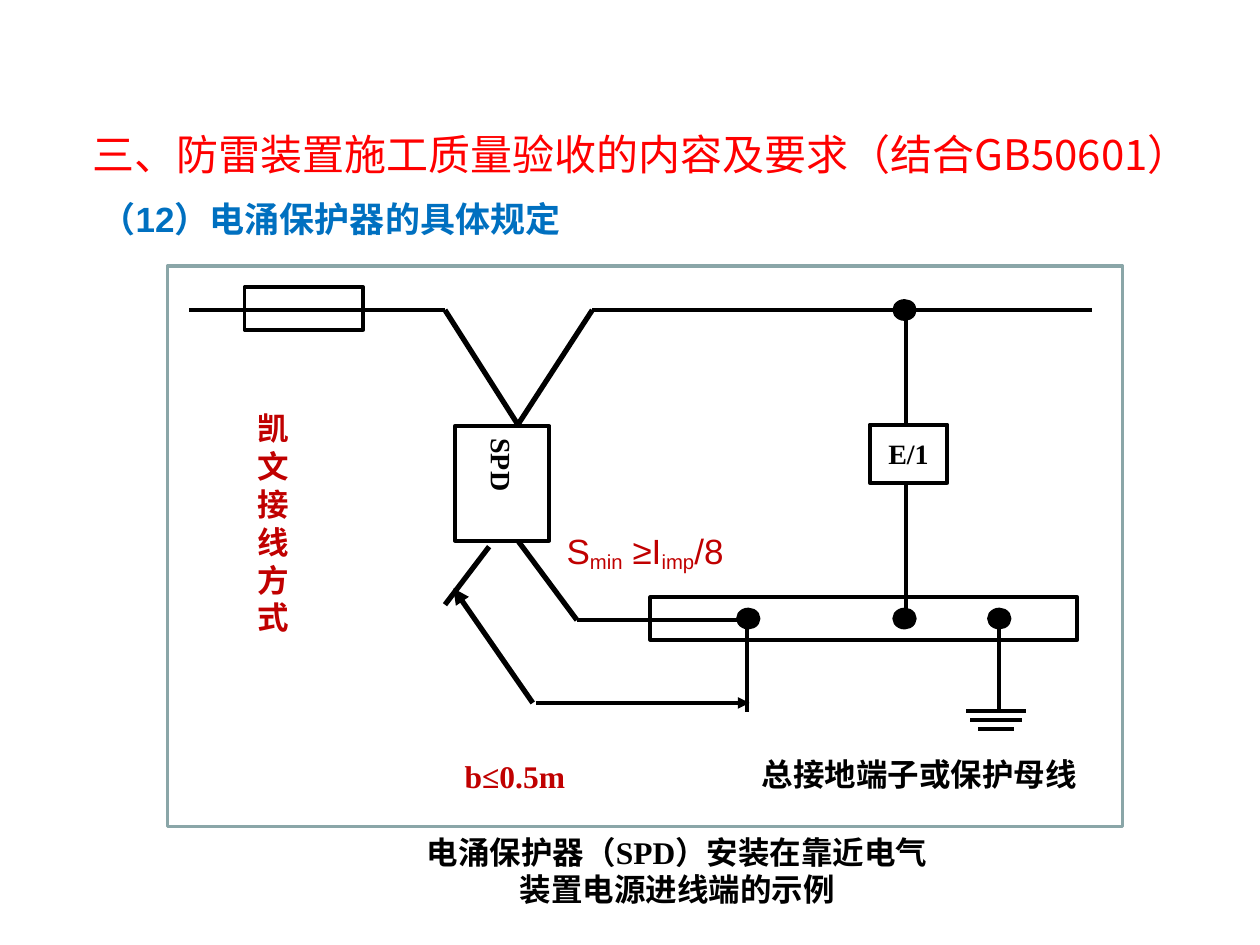
import pptx
import pptx.util
import pptx.dml.color
import pptx.enum.shapes
import pptx.enum.text
import pptx.oxml
import pptx.oxml.ns

Cm = pptx.util.Cm
Pt = pptx.util.Pt
qn = pptx.oxml.ns.qn
KIND = pptx.enum.shapes.MSO_SHAPE
ALIGN = pptx.enum.text.PP_ALIGN
MID = pptx.enum.text.MSO_ANCHOR.MIDDLE
TOP = pptx.enum.text.MSO_ANCHOR.TOP
SANS, SERIF, HAN = "Arial", "Times New Roman", "Noto Sans CJK SC"
BLACK, RED = "000000", "C00000"


def paint(item, tone):
    item.rgb = pptx.dml.color.RGBColor.from_string(tone)


def write(frame, paras, size, face, tone, bold=False, align=ALIGN.CENTER, anchor=TOP):
    frame.word_wrap = True
    frame.auto_size = pptx.enum.text.MSO_AUTO_SIZE.NONE
    frame.vertical_anchor = anchor
    for i, runs in enumerate(paras):
        para = frame.add_paragraph() if i else frame.paragraphs[0]
        para.alignment = align
        for words, base in runs:
            run = para.add_run()
            run.text = words
            run.font.size = Pt(size)
            run.font.bold = bold
            run.font.name = face
            paint(run.font.color, tone)
            props = run._r.get_or_add_rPr()
            if base:
                props.set("baseline", str(base * 1000))
            props.append(pptx.oxml.parse_xml(
                f'<a:ea {pptx.oxml.ns.nsdecls("a")} typeface="{HAN}"/>'))


deck = pptx.Presentation()
deck.slide_width, deck.slide_height = Cm(25.4), Cm(19.05)
slide = deck.slides.add_slide(deck.slide_layouts[5])
shapes = slide.shapes

title = shapes.title
title.left, title.top, title.width, title.height = Cm(1.57), Cm(2.18), Cm(22.71), Cm(1.83)
write(title.text_frame, [[("三、防雷装置施工质量验收的内容及要求（结合GB50601）", 0)]],
      24, HAN, "FF0000", anchor=MID)

panel = shapes.add_shape(KIND.RECTANGLE, Cm(3.38), Cm(5.36), Cm(19.25), Cm(11.3))
panel.shadow.inherit = False
panel.fill.solid()
paint(panel.fill.fore_color, "FFFFFF")
paint(panel.line.color, "8AA6A8")
panel.line.width = Pt(2)
write(panel.text_frame,
      [[("S", 0), ("min", -16), (" ≥I", 0), ("imp", -16), ("/8", 0)]],
      20, SANS, RED, anchor=MID)
panel.text_frame.paragraphs[0].line_spacing = 1.25

wires = [
    (3.81, 6.25, 8.97, 6.25, 2.25, False),
    (11.94, 6.25, 22.02, 6.25, 2.25, False),
    (8.97, 6.25, 10.44, 8.56, 3, False),
    (11.94, 6.25, 10.44, 8.56, 3, False),
    (11.07, 8.56, 11.07, 10.9, 2.25, False),
    (18.26, 6.22, 18.26, 8.61, 2.25, False),
    (18.26, 9.75, 18.26, 12.32, 2.25, False),
    (15.19, 12.5, 11.63, 12.5, 2.25, False),
    (11.63, 12.5, 10.44, 10.9, 3, False),
    (9.86, 11.02, 8.97, 12.19, 3, False),
    (15.06, 12.45, 15.06, 14.35, 2.25, False),
    (10.8, 14.17, 15.11, 14.17, 2.25, True),
    (10.74, 14.17, 9.14, 11.86, 3, True),
    (20.14, 12.45, 20.14, 14.33, 2.25, False),
]
for i, half in enumerate([0.6, 0.52, 0.36]):
    level = 14.33 + 0.18 * i
    wires.append((20.08 - half, level, 20.08 + half, level, 2.25, False))

for x1, y1, x2, y2, thick, arrow in wires:
    wire = shapes.add_connector(pptx.enum.shapes.MSO_CONNECTOR.STRAIGHT,
                                Cm(x1), Cm(y1), Cm(x2), Cm(y2))
    paint(wire.line.color, BLACK)
    wire.line.width = Pt(thick)
    if arrow:
        tip = wire.line._get_or_add_ln().makeelement(qn("a:tailEnd"), {"type": "triangle"})
        wire.line._get_or_add_ln().append(tip)
    props = wire._element.spPr
    props.append(props.makeelement(qn("a:effectLst"), {}))

for x, y in [(18.03, 6.07), (18.03, 12.29), (19.94, 12.29), (14.88, 12.29)]:
    dot = shapes.add_shape(KIND.OVAL, Cm(x), Cm(y), Cm(0.41), Cm(0.36))
    dot.shadow.inherit = False
    dot.fill.solid()
    paint(dot.fill.fore_color, BLACK)
    paint(dot.line.color, BLACK)
    dot.line.width = Pt(2.25)

for x, y, wide, high, words in [
    (4.93, 5.79, 2.39, 0.86, ""),
    (9.17, 8.59, 1.9, 2.31, "SPD"),
    (13.11, 12.04, 8.61, 0.86, ""),
    (17.53, 8.56, 1.57, 1.17, "E/1"),
]:
    box = shapes.add_shape(KIND.RECTANGLE, Cm(x), Cm(y), Cm(wide), Cm(high))
    box.shadow.inherit = False
    box.fill.background()
    paint(box.line.color, BLACK)
    box.line.width = Pt(2.25)
    if words:
        upright = words == "SPD"
        write(box.text_frame, [[(words, 0)]], 16, SERIF, BLACK, True,
              ALIGN.LEFT if upright else ALIGN.CENTER, MID)
        if upright:
            box.text_frame._txBody.bodyPr.set("vert", "eaVert")
        else:
            box.text_frame.margin_left = box.text_frame.margin_right = 0

for x, y, wide, high, paras, size, face, tone, align in [
    (8.38, 15.14, 4, 1.02, ["b≤0.5m"], 18, SERIF, RED, ALIGN.CENTER),
    (14.53, 15.09, 8, 1.02, ["总接地端子或保护母线"], 18, SERIF, BLACK, ALIGN.CENTER),
    (4.95, 8.13, 1.4, 4.88, ["凯文接线方式"], 18, SANS, RED, ALIGN.LEFT),
    (1.9, 16.66, 23.5, 1.8, ["电涌保护器（SPD）安装在靠近电气", "装置电源进线端的示例"],
     18, SERIF, BLACK, ALIGN.CENTER),
    (1.78, 3.86, 9.91, 1.12, ["（12）电涌保护器的具体规定"], 20, SANS, "0070C0", ALIGN.LEFT),
]:
    label = shapes.add_textbox(Cm(x), Cm(y), Cm(wide), Cm(high))
    write(label.text_frame, [[(words, 0)] for words in paras], size, face, tone, True, align)

deck.save("out.pptx")
